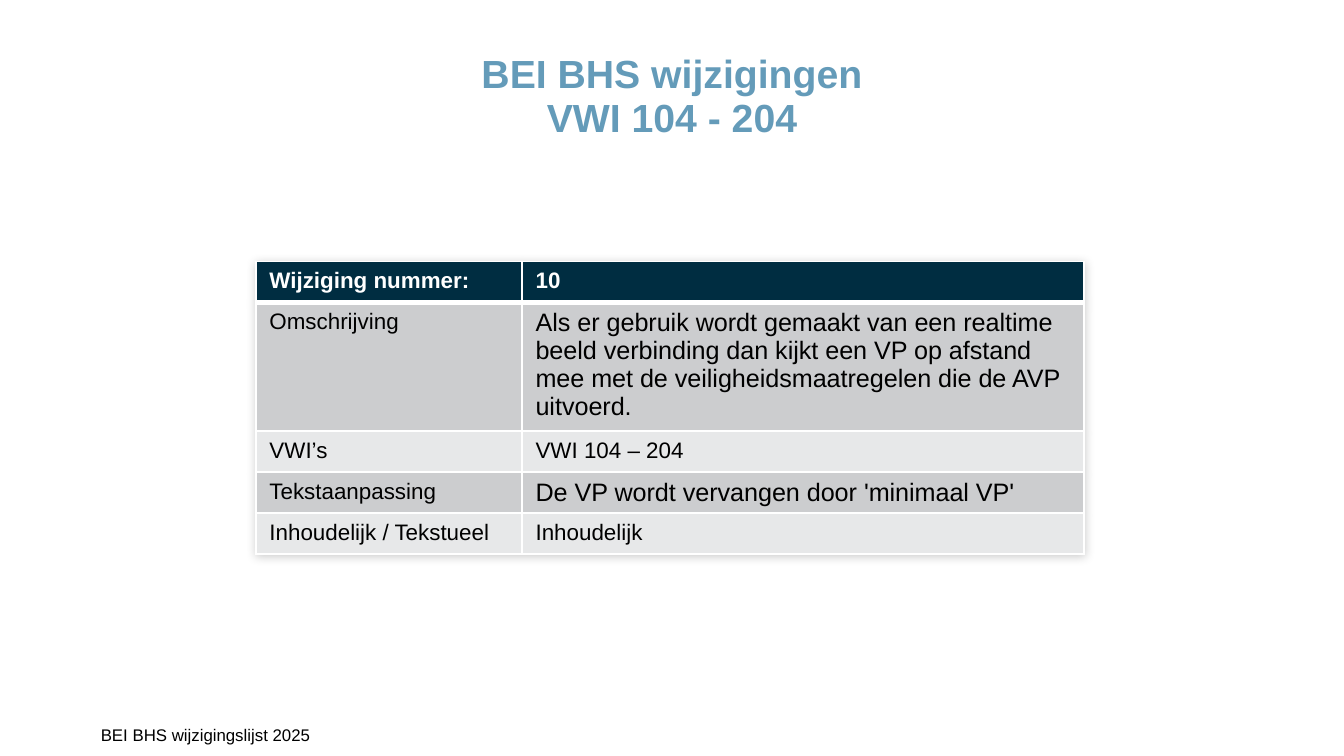
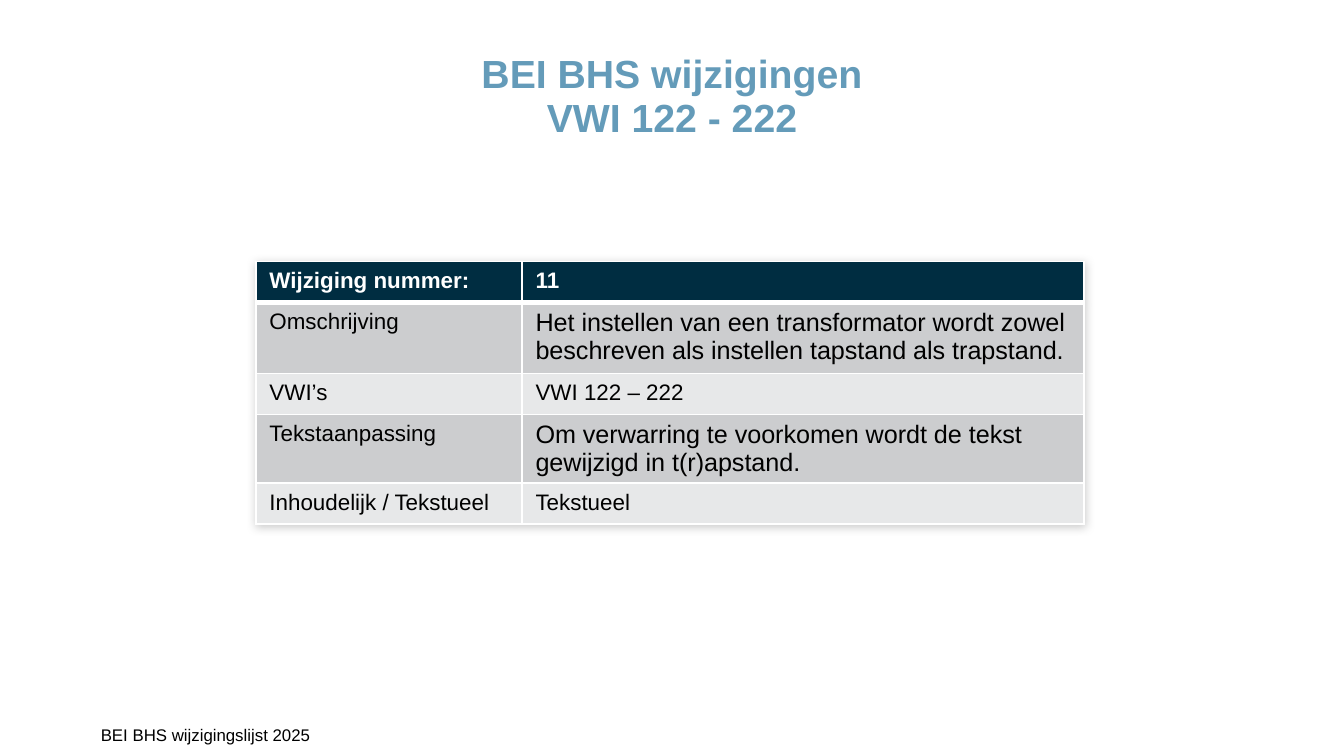
from dataclasses import dataclass

from lxml.etree import SubElement
from pptx import Presentation
from pptx.dml.color import RGBColor as RGB
from pptx.enum.text import MSO_ANCHOR as Anchor, PP_ALIGN as Align
from pptx.oxml import parse_xml
from pptx.oxml.ns import nsdecls, qn
from pptx.util import Pt

PX = 4572  # EMU per px, 200 px to the inch


@dataclass(frozen=True)
class Theme:
    font: str = "Arial"
    title: str = "649BB9"
    header: str = "002D41"
    odd_row: str = "CCCDCF"
    even_row: str = "E7E8E9"
    light: str = "FFFFFF"
    dark: str = "000000"
    title_size: float = 21
    label_size: float = 12
    body_size: float = 13.5
    footer_size: float = 9
    rule: float = 1
    header_rule: float = 3


class Deck:
    def __init__(self, theme, width, height):
        self.theme = theme
        self.prs = Presentation()
        self.prs.slide_width, self.prs.slide_height = width * PX, height * PX
        self.slide = None

    def new_slide(self):
        self.slide = self.prs.slides.add_slide(self.prs.slide_layouts[6])

    def run(self, paragraph, text, size, color, bold=False):
        run = paragraph.add_run()
        run.text = text
        run.font.name, run.font.size, run.font.bold = self.theme.font, Pt(size), bold
        run.font.color.rgb = RGB.from_string(color)

    def frame(self, *box):
        frame = self.slide.shapes.add_textbox(*(v * PX for v in box)).text_frame
        frame.word_wrap = True
        frame.vertical_anchor = Anchor.TOP
        frame.margin_left = frame.margin_right = 0
        frame.margin_top = frame.margin_bottom = 0
        return frame.paragraphs[0]

    def title(self, *lines):
        heading = self.frame(381, 78, 1238, 188)
        heading.alignment = Align.CENTER
        heading.line_spacing = 0.95
        for i, line in enumerate(lines):
            if i:
                heading.add_line_break()
            self.run(heading, line, self.theme.title_size, self.theme.title, True)

    def footer(self, text):
        note = self.frame(0, 1079, 944, 46)
        note._p.get_or_add_pPr().set("marL", str(150 * PX))
        self.run(note, text, self.theme.footer_size, self.theme.dark)

    def borders(self, cell, row):
        t = self.theme
        widths = {"L": t.rule, "R": t.rule,
                  "T": t.header_rule if row == 1 else t.rule,
                  "B": t.header_rule if row == 0 else t.rule}
        props = cell._tc.get_or_add_tcPr()
        for side, width in widths.items():
            line = SubElement(props, qn(f"a:ln{side}"), w=str(Pt(width)))
            fill = SubElement(line, qn("a:solidFill"))
            SubElement(fill, qn("a:srgbClr"), val=t.light)

    def table(self, rows, columns, heights):
        t = self.theme
        box = (381, 389, sum(columns), sum(heights))
        table = self.slide.shapes.add_table(
            len(rows), len(columns), *(v * PX for v in box)).table
        for column, width in zip(table.columns, columns):
            column.width = width * PX
        # Soft shadow around the whole table
        table._tbl.tblPr.insert(0, parse_xml(
            f'<a:effectLst {nsdecls("a")}><a:outerShdw blurRad="63500" dist="12700" '
            'dir="5400000" algn="ctr" rotWithShape="0"><a:srgbClr val="000000">'
            '<a:alpha val="20000"/></a:srgbClr></a:outerShdw></a:effectLst>'))
        for r, (values, height) in enumerate(zip(rows, heights)):
            table.rows[r].height = height * PX
            is_header = r == 0
            fill = t.header if is_header else t.odd_row if r % 2 else t.even_row
            for c, value in enumerate(values):
                cell = table.cell(r, c)
                self.borders(cell, r)
                cell.fill.solid()
                cell.fill.fore_color.rgb = RGB.from_string(fill)
                # Explanatory texts in the odd rows are larger and sit tighter
                is_body = r % 2 and c
                if is_body:
                    cell.margin_bottom = 2 * PX
                self.run(cell.text_frame.paragraphs[0], value,
                         t.body_size if is_body else t.label_size,
                         t.light if is_header else t.dark, is_header)


LABELS = ("Wijziging nummer:", "Omschrijving", "VWI’s", "Tekstaanpassing",
          "Inhoudelijk / Tekstueel")

# Number, description, work instructions, text change, kind
CHANGES = [
    ("10",
     "Als er gebruik wordt gemaakt van een realtime beeld verbinding dan kijkt "
     "een VP op afstand mee met de veiligheidsmaatregelen die de AVP uitvoerd.",
     (104, 204),
     "De VP wordt vervangen door 'minimaal VP'",
     "Inhoudelijk"),
    ("11",
     "Het instellen van een transformator wordt zowel beschreven als instellen "
     "tapstand als trapstand.",
     (122, 222),
     "Om verwarring te voorkomen wordt de tekst gewijzigd in t(r)apstand.",
     "Tekstueel"),
]


def main():
    deck = Deck(Theme(), 2000, 1125)
    for number, description, (first, second), change, kind in CHANGES:
        deck.new_slide()
        deck.title("BEI BHS wijzigingen", f"VWI {first} - {second}")
        values = (number, description, f"VWI {first} – {second}", change, kind)
        deck.table(list(zip(LABELS, values)), (396, 836), (61, 106, 61, 61, 61))
        deck.footer("BEI BHS wijzigingslijst 2025")
    deck.prs.save("out.pptx")


if __name__ == "__main__":
    main()
